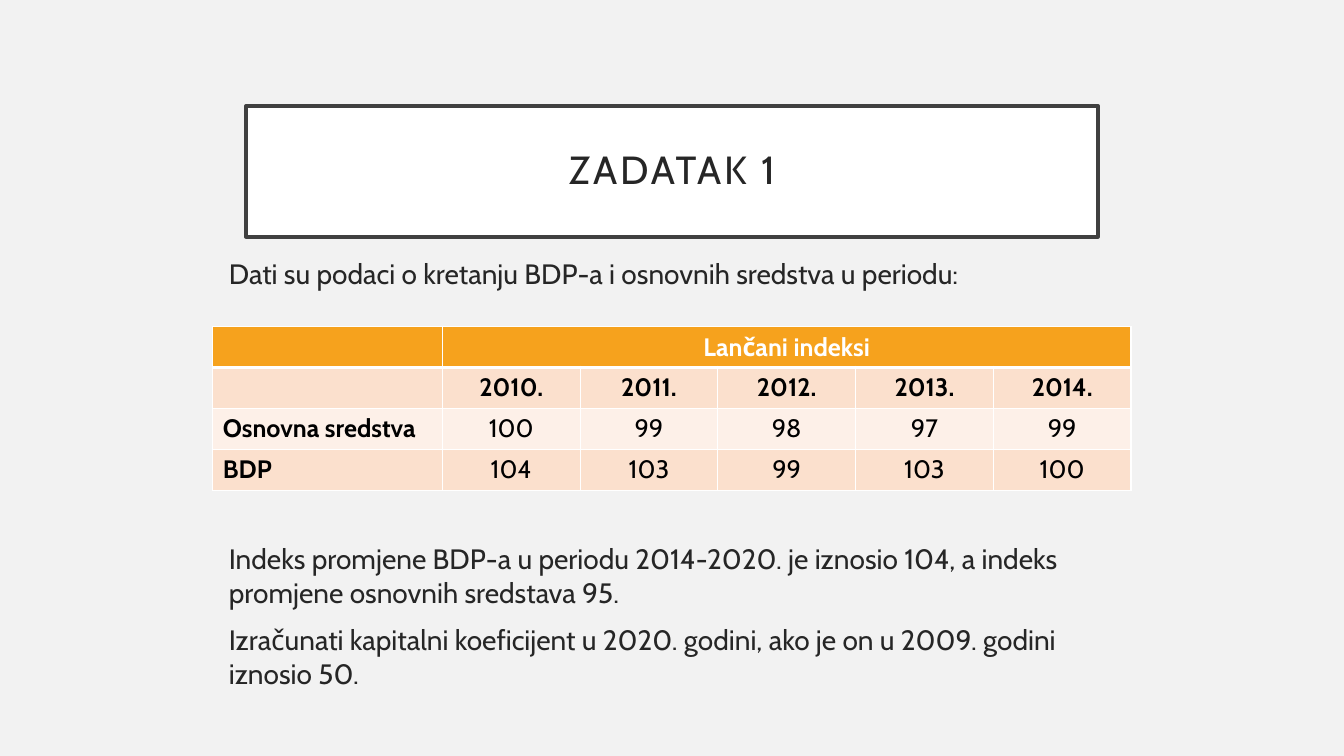
import lxml.etree
import pptx
import pptx.dml.color
import pptx.enum.text
import pptx.oxml.ns
import pptx.util

RGBColor = pptx.dml.color.RGBColor
PAPER = RGBColor(0xF2, 0xF2, 0xF2)
WHITE = RGBColor(0xFF, 0xFF, 0xFF)
BLACK = RGBColor(0, 0, 0)
INK = RGBColor(0x26, 0x26, 0x26)
FRAME = RGBColor(0x40, 0x40, 0x40)
GOLD = RGBColor(0xF6, 0xA2, 0x1D)
PEACH = RGBColor(0xFB, 0xE0, 0xCD)
CREAM = RGBColor(0xFD, 0xF0, 0xE8)

ALIGN = pptx.enum.text.PP_ALIGN
Pt = pptx.util.Pt
qn = pptx.oxml.ns.qn


class Page:
    """Style and current slide; places are percent of the slide's size."""

    font = "Cabin"

    def __init__(self, deck):
        self.wide, self.high = deck.slide_width, deck.slide_height
        self.slide = deck.slides.add_slide(deck.slide_layouts[1])
        fill = self.slide.background.fill
        fill.solid()
        fill.fore_color.rgb = PAPER

    def area(self, left, top, width, height):
        return (round(self.wide * left / 100), round(self.high * top / 100),
                round(self.wide * width / 100), round(self.high * height / 100))

    def move(self, shape, area):
        shape.left, shape.top, shape.width, shape.height = self.area(*area)

    def style(self, para, size, color, bold=False):
        for run in para.runs:
            run.font.name = self.font
            run.font.size = Pt(size)
            run.font.bold = bold
            run.font.color.rgb = color

    def title(self, text, area):
        box = self.slide.shapes.title
        self.move(box, area)
        box.fill.solid()
        box.fill.fore_color.rgb = WHITE
        box.line.color.rgb = FRAME
        box.line.width = Pt(2.5)
        frame = box.text_frame
        frame.text = text
        frame.auto_size = pptx.enum.text.MSO_AUTO_SIZE.NONE
        frame.vertical_anchor = pptx.enum.text.MSO_ANCHOR.MIDDLE
        inset = pptx.util.Inches(0.2)
        frame.margin_left = frame.margin_right = inset
        frame.margin_top = frame.margin_bottom = inset
        para = frame.paragraphs[0]
        para.alignment = ALIGN.CENTER
        para.line_spacing = 0.9
        self.style(para, 28, INK)
        para.runs[0].font._element.set("spc", "200")

    def body(self, items, area):
        """Items are pairs of text and space before in points."""
        box = self.slide.placeholders[1]
        self.move(box, area)
        frame = box.text_frame
        frame.text = "\n".join(text for text, gap in items)
        frame.auto_size = pptx.enum.text.MSO_AUTO_SIZE.NONE
        for para, (text, gap) in zip(frame.paragraphs, items):
            props = para._p.get_or_add_pPr()
            props.set("marL", "0")
            props.set("indent", "0")
            lxml.etree.SubElement(props, qn("a:buNone"))
            para.space_before = Pt(gap)
            self.style(para, 20, INK)

    def edge(self, cell, side, width):
        props = cell._tc.get_or_add_tcPr()
        line = lxml.etree.Element(qn("a:ln" + side), w=str(Pt(width)))
        fill = lxml.etree.SubElement(line, qn("a:solidFill"))
        lxml.etree.SubElement(fill, qn("a:srgbClr"), val=str(WHITE))
        props.insert("LRTB".index(side), line)

    def table(self, rows, shares, fills, area):
        """Shares give each column's percent of the table's width."""
        grid = self.slide.shapes.add_table(
            len(rows), len(shares), *self.area(*area)).table
        total = self.area(*area)[2]
        for col, share in zip(grid.columns, shares):
            col.width = round(total * share / 100)
        for r, row in enumerate(rows):
            for c, text in enumerate(row):
                cell = grid.cell(r, c)
                cell.fill.solid()
                cell.fill.fore_color.rgb = fills[r]
                for side in "LRTB":
                    thick = (r, side) in ((0, "B"), (1, "T"))
                    self.edge(cell, side, 3 if thick else 1)
                cell.text = text
                para = cell.text_frame.paragraphs[0]
                para.alignment = ALIGN.CENTER if c else ALIGN.LEFT
                self.style(para, 18, BLACK if r else WHITE, r < 2 or c == 0)
        grid.cell(0, 1).merge(grid.cell(0, len(shares) - 1))


def main():
    deck = pptx.Presentation()
    deck.slide_width = pptx.util.Inches(13.33)
    deck.slide_height = pptx.util.Inches(7.5)
    page = Page(deck)

    # Title in its frame
    page.title("ZADATAK 1", (18.3, 14, 63.4, 17.33))

    # Task text, with room left for the table
    page.body([
        ("Dati su podaci o kretanju BDP-a i osnovnih sredstva u periodu:", 0),
        ("Indeks promjene BDP-a u periodu 2014-2020. je iznosio 104, "
         "a indeks promjene osnovnih sredstava 95.", 180),
        ("Izračunati kapitalni koeficijent u 2020. godini, "
         "ako je on u 2009. godini iznosio 50.", 10),
    ], (16.28, 33.2, 67.44, 60.4))

    # Chain indices by year
    page.table([
        ["", "Lančani indeksi", "", "", "", ""],
        ["", "2010.", "2011.", "2012.", "2013.", "2014."],
        ["Osnovna sredstva", "100", "99", "98", "97", "99"],
        ["BDP", "104", "103", "99", "103", "100"],
    ], [25] + [15] * 5, [GOLD, PEACH, CREAM, PEACH], (15.83, 43.2, 68.34, 21.6))

    deck.save("out.pptx")


if __name__ == "__main__":
    main()
